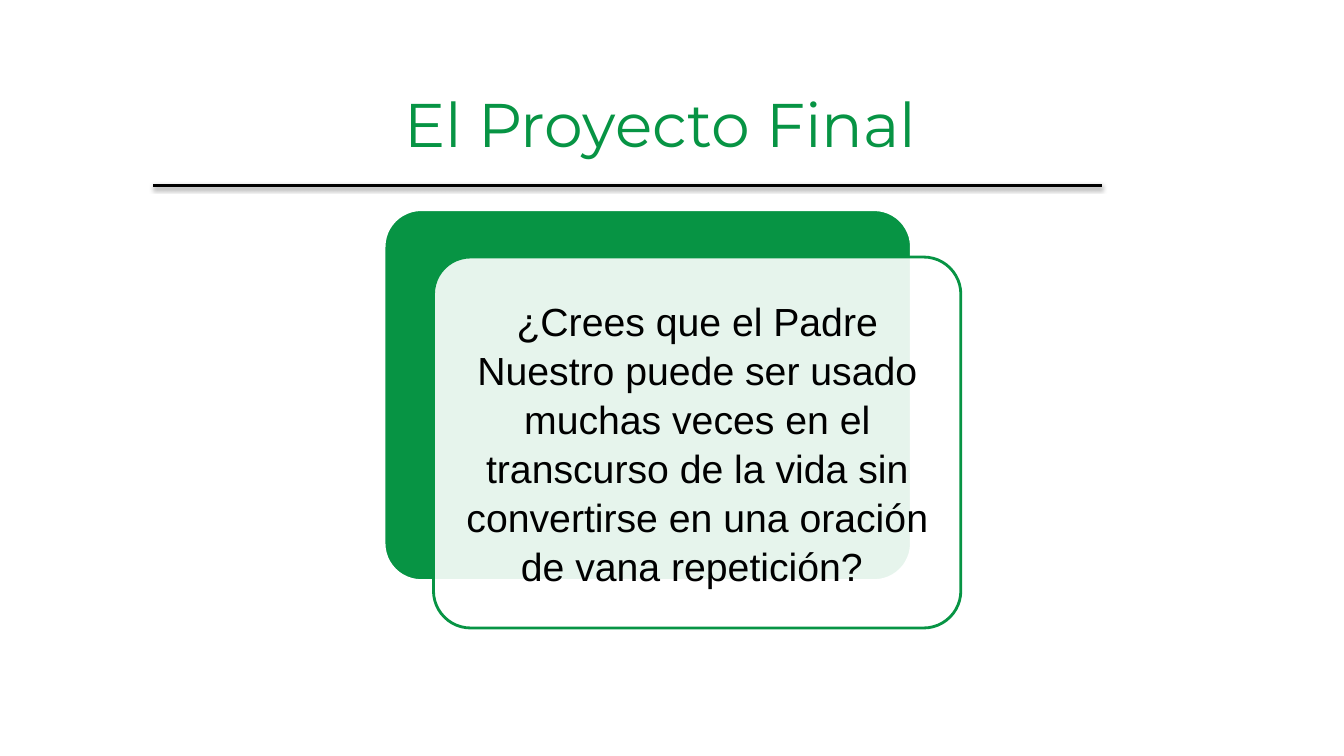
from dataclasses import dataclass
from lxml import etree
from pptx import Presentation
from pptx.dml.color import RGBColor
from pptx.enum.shapes import MSO_CONNECTOR, MSO_SHAPE
from pptx.enum.text import MSO_ANCHOR, PP_ALIGN
from pptx.oxml.ns import qn
from pptx.util import Inches, Pt

TITLE = "El Proyecto Final"
QUESTION = (
    "¿Crees que el Padre Nuestro puede ser usado muchas veces en el "
    "transcurso de la vida sin convertirse en una oración de vana repetición? "
)
TITLE_BOX = (0.75, 0.8, 11.6, 2.54)
RULE = (1.52, 1.84, 10.93, 1.84)
CARD_ORIGIN = (3.81, 2.08)
CARD_SIZE = (5.23, 3.68)
CARD_OFFSET = (0.49, 0.47)
CARD_INSET = 0.11

CENTER = PP_ALIGN.CENTER
TOP = MSO_ANCHOR.TOP
MIDDLE = MSO_ANCHOR.MIDDLE
ROUNDED = MSO_SHAPE.ROUNDED_RECTANGLE
STRAIGHT = MSO_CONNECTOR.STRAIGHT


@dataclass(frozen=True)
class Theme:
    green: RGBColor = RGBColor(0x07, 0x94, 0x44)
    black: RGBColor = RGBColor(0, 0, 0)
    white: RGBColor = RGBColor(255, 255, 255)
    title_font: str = "Montserrat"
    body_font: str = "Arial"
    title_size: int = 44
    body_size: int = 28
    line_width: int = 2


THEME = Theme()


def write_text(shape, text, *, font, size, color, anchor, margins, spacing=1.0):
    frame = shape.text_frame
    frame.word_wrap = True
    frame.vertical_anchor = anchor
    frame.margin_left = frame.margin_right = Inches(margins[0])
    frame.margin_top = frame.margin_bottom = Inches(margins[1])
    paragraph = frame.paragraphs[0]
    paragraph.alignment = CENTER
    paragraph.line_spacing = spacing
    paragraph.space_before = Pt(0)
    run = paragraph.add_run()
    run.text = text
    run.font.name = font
    run.font.size = Pt(size)
    run.font.color.rgb = color


def add_title(slide):
    title = slide.shapes.title
    title.left, title.top, title.width, title.height = map(Inches, TITLE_BOX)
    write_text(title, TITLE, font=THEME.title_font, size=THEME.title_size,
               color=THEME.green, anchor=TOP, margins=(0.1, 0.05))


def add_rule(slide):
    rule = slide.shapes.add_connector(STRAIGHT, *map(Inches, RULE))
    rule.line.color.rgb = THEME.black
    rule.line.width = Pt(THEME.line_width)
    properties = rule.line._get_or_add_ln().getparent()
    effects = etree.SubElement(properties, qn("a:effectLst"))
    shadow = etree.SubElement(
        effects, qn("a:outerShdw"), blurRad=str(Pt(3.1)), dist=str(Pt(1.6)),
        dir="5400000", rotWithShape="0")
    color = etree.SubElement(shadow, qn("a:srgbClr"), val=str(THEME.black))
    etree.SubElement(color, qn("a:alpha"), val="38000")


def add_card(slide, left, top, *, fill, line, opacity=100):
    card = slide.shapes.add_shape(
        ROUNDED, Inches(left), Inches(top), *map(Inches, CARD_SIZE))
    card.adjustments[0] = 0.1
    card.shadow.inherit = False
    card.fill.solid()
    card.fill.fore_color.rgb = fill
    card.line.color.rgb = line
    card.line.width = Pt(THEME.line_width)
    if opacity < 100:
        color = card.fill._xPr.find(qn("a:solidFill"))[0]
        etree.SubElement(color, qn("a:alpha"), val=str(opacity * 1000))


def add_question(slide):
    left, top = CARD_ORIGIN
    front_left, front_top = left + CARD_OFFSET[0], top + CARD_OFFSET[1]
    add_card(slide, left, top, fill=THEME.green, line=THEME.white)
    add_card(slide, front_left, front_top, fill=THEME.white,
             line=THEME.green, opacity=90)
    box = slide.shapes.add_textbox(
        Inches(front_left + CARD_INSET), Inches(front_top + CARD_INSET),
        *(Inches(side - 2 * CARD_INSET) for side in CARD_SIZE))
    write_text(box, QUESTION, font=THEME.body_font, size=THEME.body_size,
               color=THEME.black, anchor=MIDDLE, margins=(0.12, 0.12), spacing=1.04)


def main():
    presentation = Presentation()
    presentation.slide_width = Inches(13.33)
    presentation.slide_height = Inches(7.5)
    slide = presentation.slides.add_slide(presentation.slide_layouts[5])
    add_title(slide)
    add_rule(slide)
    add_question(slide)
    presentation.save("out.pptx")


if __name__ == "__main__":
    main()
